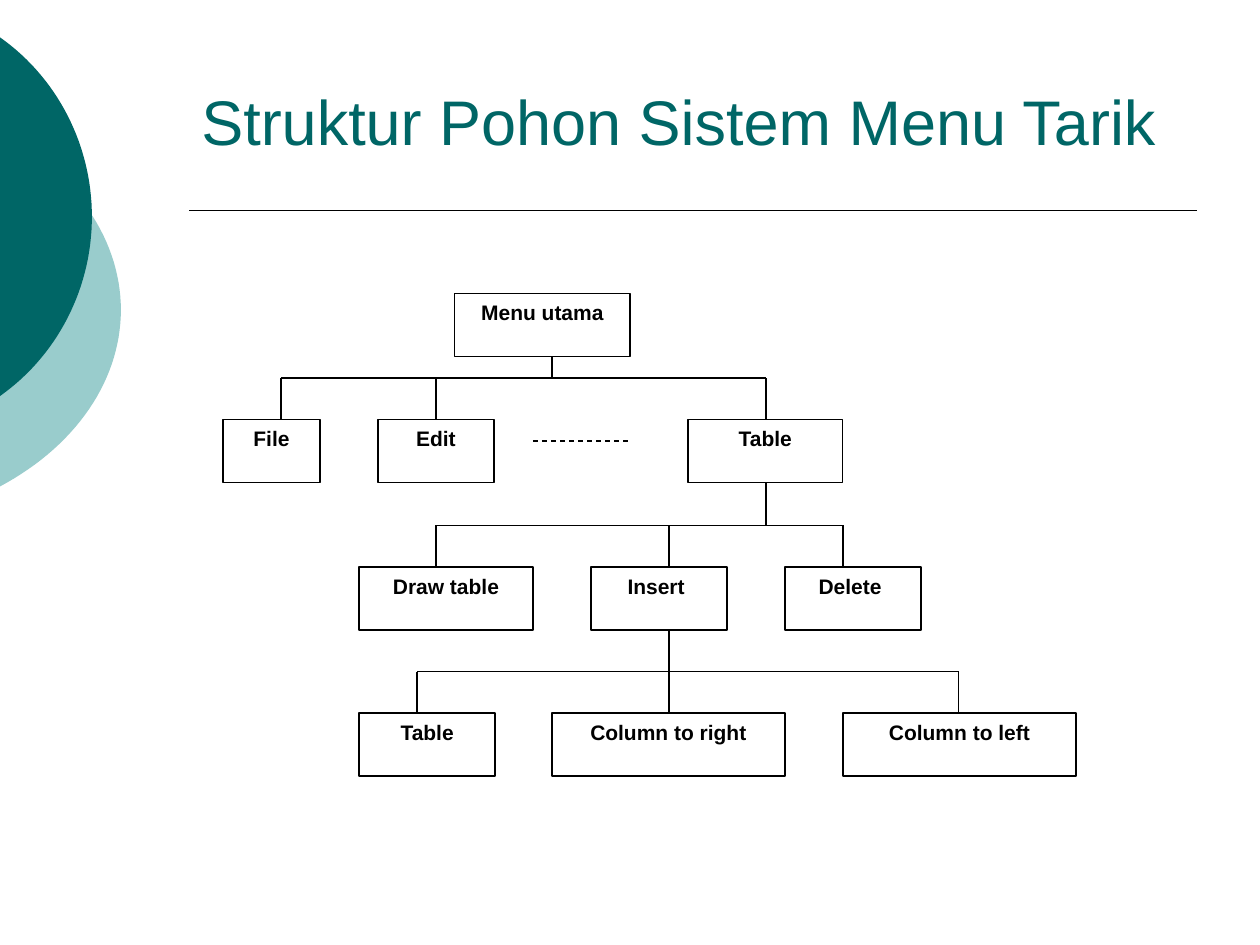
import math

import pptx
import pptx.dml.color
import pptx.enum.dml
import pptx.enum.shapes
import pptx.enum.text
import pptx.oxml.ns
import pptx.util
from lxml import etree

Inches = pptx.util.Inches
COLORS = {"teal": "006666", "aqua": "99CCCC", "black": "000000", "white": "FFFFFF"}
BOX_HEIGHT = 0.5
BUS_GAP = 0.33

# Each row: top, then (label, left, width) for every box
ROWS = [
    (2.33, [("Menu utama", 3.61, 1.39)]),
    (3.33, [("File", 1.77, 0.77), ("Edit", 3, 0.92), ("Table", 5.46, 1.23)]),
    (4.5, [("Draw table", 2.85, 1.38), ("Insert ", 4.69, 1.08), ("Delete ", 6.23, 1.08)]),
    (5.66, [("Table", 2.85, 1.08), ("Column to right", 4.38, 1.85),
            ("Column to left", 6.69, 1.85)]),
]
# Between successive rows: x of the parent stem, x of each child drop
BRANCHES = [
    (4.38, [2.23, 3.46, 6.08]),
    (6.08, [3.46, 5.31, 6.69]),
    (5.31, [3.31, 5.31, 7.61]),
]


def rgb(name):
    return pptx.dml.color.RGBColor.from_string(COLORS[name])


class SlideBuilder:
    font = "Arial"

    def __init__(self, slide):
        self.shapes = slide.shapes

    def add_text(self, tf, text, size, color, bold=False, align=None):
        tf.word_wrap = True
        p = tf.paragraphs[0]
        p.alignment = align
        r = p.add_run()
        r.text = text
        r.font.name = self.font
        r.font.size = pptx.util.Pt(size)
        r.font.bold = bold
        r.font.color.rgb = rgb(color)

    def title(self, text, left, top, width, height):
        sp = self.shapes.add_textbox(*map(Inches, (left, top, width, height)))
        sp.text_frame.vertical_anchor = pptx.enum.text.MSO_ANCHOR.MIDDLE
        self.add_text(sp.text_frame, text, 36, "teal")

    def box(self, text, left, top, width):
        sp = self.shapes.add_shape(pptx.enum.shapes.MSO_SHAPE.RECTANGLE,
                                   *map(Inches, (left, top, width, BOX_HEIGHT)))
        sp.shadow.inherit = False
        sp.fill.solid()
        sp.fill.fore_color.rgb = rgb("white")
        sp.line.color.rgb = rgb("black")
        sp.line.width = pptx.util.Pt(0.75)
        sp.text_frame.vertical_anchor = pptx.enum.text.MSO_ANCHOR.TOP
        self.add_text(sp.text_frame, text, 12, "black", True,
                      pptx.enum.text.PP_ALIGN.CENTER)

    def line(self, x1, y1, x2, y2, width=0.75, dashed=False):
        cxn = self.shapes.add_connector(pptx.enum.shapes.MSO_CONNECTOR.STRAIGHT,
                                        *map(Inches, (x1, y1, x2, y2)))
        cxn.line.color.rgb = rgb("black")
        cxn.line.width = pptx.util.Pt(width)
        if dashed:
            cxn.line.dash_style = pptx.enum.dml.MSO_LINE.DASH
        etree.SubElement(cxn._element.spPr, pptx.oxml.ns.qn("a:effectLst"))

    def edge_arc(self, cx, cy, rx, ry, color, steps=60):
        """Draw the part of an ellipse that lies right of the slide's left edge."""
        limit = math.acos(-cx / rx)
        angles = [limit * (2 * i / steps - 1) for i in range(steps + 1)]
        points = [(Inches(cx + rx * math.cos(a)), Inches(cy + ry * math.sin(a)))
                  for a in angles]
        builder = self.shapes.build_freeform(*points[0])
        builder.add_line_segments(points[1:], close=True)
        sp = builder.convert_to_shape()
        sp.shadow.inherit = False
        sp.fill.solid()
        sp.fill.fore_color.rgb = rgb(color)
        sp.line.fill.background()

    def branch(self, stem_x, parent_bottom, drops, child_top):
        bus_y = child_top - BUS_GAP
        self.line(drops[0], bus_y, drops[-1], bus_y)
        self.line(stem_x, parent_bottom, stem_x, bus_y)
        for x in drops:
            self.line(x, bus_y, x, child_top)


def main():
    prs = pptx.Presentation()
    prs.slide_width, prs.slide_height = Inches(10), Inches(7.5)
    s = SlideBuilder(prs.slides.add_slide(prs.slide_layouts[6]))

    s.edge_arc(-1.29, 2.46, 2.25, 1.71, "aqua")
    s.edge_arc(-0.96, 1.72, 1.69, 1.73, "teal")
    s.line(1.5, 1.67, 9.5, 1.67, width=1)
    s.title("Struktur Pohon Sistem Menu Tarik", 1.5, 0.33, 8, 1.25)

    for top, boxes in ROWS:
        for label, left, width in boxes:
            s.box(label, left, top, width)
    s.line(4.23, 3.5, 5, 3.5, dashed=True)
    for (parent_top, _), (child_top, _), (stem_x, drops) in zip(ROWS, ROWS[1:], BRANCHES):
        s.branch(stem_x, parent_top + BOX_HEIGHT, drops, child_top)

    prs.save("out.pptx")


if __name__ == "__main__":
    main()
